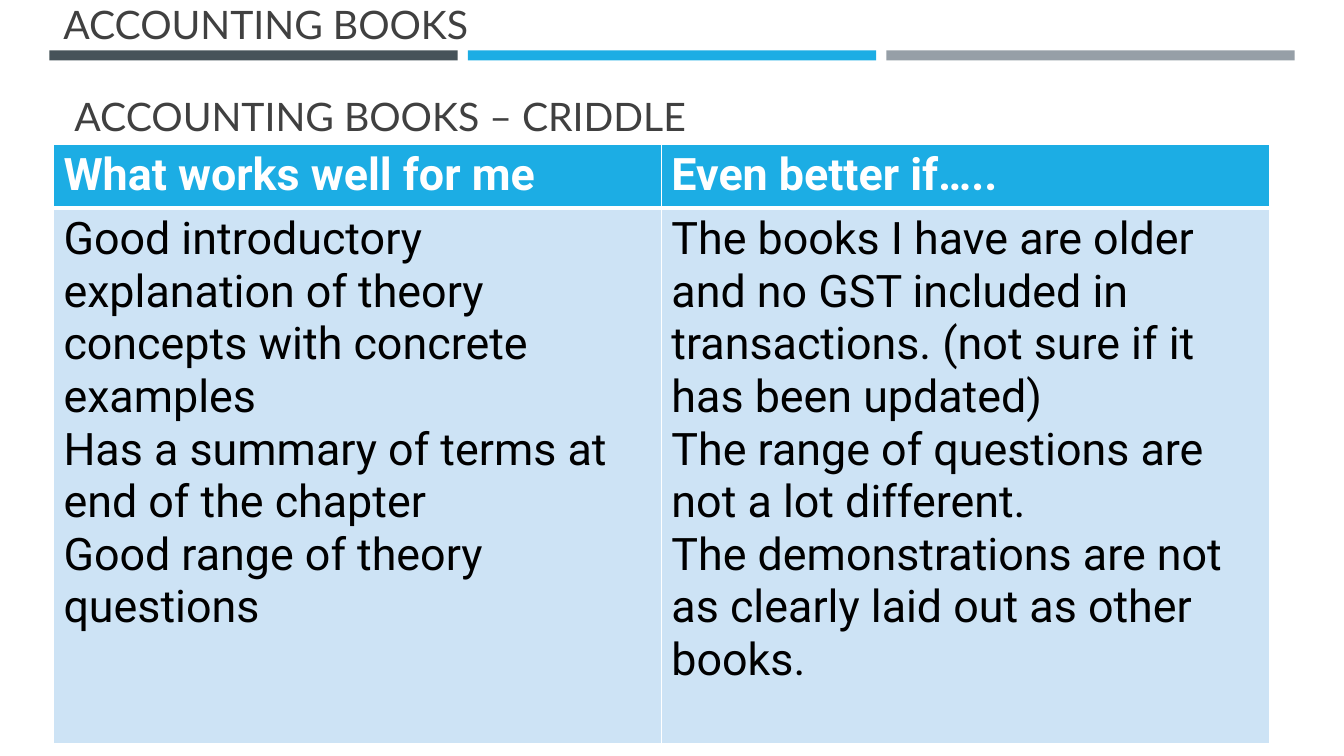
from lxml import etree
from pptx import Presentation
from pptx.dml.color import RGBColor
from pptx.enum.shapes import MSO_SHAPE
from pptx.enum.text import MSO_ANCHOR
from pptx.oxml.ns import qn
from pptx.util import Inches, Pt

WHITE = RGBColor(0xFF, 0xFF, 0xFF)
BLACK = RGBColor(0x00, 0x00, 0x00)
CHARCOAL = RGBColor(0x40, 0x40, 0x40)
SLATE = RGBColor(0x46, 0x53, 0x59)
BLUE = RGBColor(0x1C, 0xAD, 0xE4)
GREY = RGBColor(0x96, 0x9F, 0xA7)
PALE_BLUE = RGBColor(0xCD, 0xE3, 0xF5)

BAR_LEFT, BAR_STEP, BAR_WIDTH = 0.49, 4.15, 4.05
CONTENT_LEFT, CONTENT_WIDTH = 0.53, 12.06
ROW_HEIGHTS = [0.62, 5.31]

HEADINGS = ["What works well for me", "Even better if….."]
COMMENTS = [
    [
        "Good introductory explanation of theory concepts with concrete examples",
        "Has a summary of terms at end of the chapter",
        "Good range of theory questions",
    ],
    [
        "The books I have are older and no GST included in transactions. "
        "(not sure if it has been updated)",
        "The range of questions are not a lot different.",
        "The demonstrations are not as clearly laid out as other books.",
    ],
]


def write_text(text_frame, lines, *, font, size, color, bold=False):
    text_frame.word_wrap = True
    for index, line in enumerate(lines):
        paragraph = text_frame.paragraphs[0] if index == 0 else text_frame.add_paragraph()
        run = paragraph.add_run()
        run.text = line
        run.font.name = font
        run.font.size = Pt(size)
        run.font.bold = bold
        run.font.color.rgb = color


def add_bar(slide, left, color):
    bar = slide.shapes.add_shape(
        MSO_SHAPE.RECTANGLE, Inches(left), Inches(0.5), Inches(BAR_WIDTH), Inches(0.1)
    )
    bar.shadow.inherit = False
    bar.fill.solid()
    bar.fill.fore_color.rgb = color
    bar.line.fill.background()


def add_title(slide, text, left, top, height):
    box = slide.shapes.add_textbox(
        Inches(left), Inches(top), Inches(CONTENT_WIDTH), Inches(height)
    )
    box.text_frame.vertical_anchor = MSO_ANCHOR.BOTTOM
    write_text(box.text_frame, [text], font="Lato", size=28, color=CHARCOAL)


def set_borders(cell, **widths):
    """Draw white borders; widths are points keyed by L, R, T and B, in that order."""
    properties = cell._tc.get_or_add_tcPr()
    for index, (side, width) in enumerate(widths.items()):
        line = etree.Element(qn(f"a:ln{side}"), w=str(Pt(width)))
        fill = etree.SubElement(line, qn("a:solidFill"))
        etree.SubElement(fill, qn("a:srgbClr"), val=str(WHITE))
        properties.insert(index, line)


def fill_cell(cell, lines, *, background, color, bold, top, bottom):
    cell.fill.solid()
    cell.fill.fore_color.rgb = background
    set_borders(cell, L=1, R=1, T=top, B=bottom)
    write_text(cell.text_frame, lines, font="Roboto", size=32, color=color, bold=bold)


def add_review_table(slide):
    table = slide.shapes.add_table(
        2, 2, Inches(CONTENT_LEFT), Inches(1.43),
        Inches(CONTENT_WIDTH), Inches(sum(ROW_HEIGHTS)),
    ).table
    for row, height in zip(table.rows, ROW_HEIGHTS):
        row.height = Inches(height)
    for column, (heading, comments) in enumerate(zip(HEADINGS, COMMENTS)):
        fill_cell(table.cell(0, column), [heading], background=BLUE,
                  color=WHITE, bold=True, top=1, bottom=3)
        fill_cell(table.cell(1, column), comments, background=PALE_BLUE,
                  color=BLACK, bold=False, top=3, bottom=1)


def main():
    presentation = Presentation()
    presentation.slide_width = Inches(13.33)
    presentation.slide_height = Inches(7.5)
    slide = presentation.slides.add_slide(presentation.slide_layouts[6])

    for index, color in enumerate([SLATE, BLUE, GREY]):
        add_bar(slide, BAR_LEFT + index * BAR_STEP, color)
    add_title(slide, "ACCOUNTING BOOKS – CRIDDLE", left=0.64, top=0.77, height=0.66)
    add_review_table(slide)
    add_title(slide, "ACCOUNTING BOOKS", left=CONTENT_LEFT, top=-0.1, height=0.62)

    presentation.save("out.pptx")


if __name__ == "__main__":
    main()
